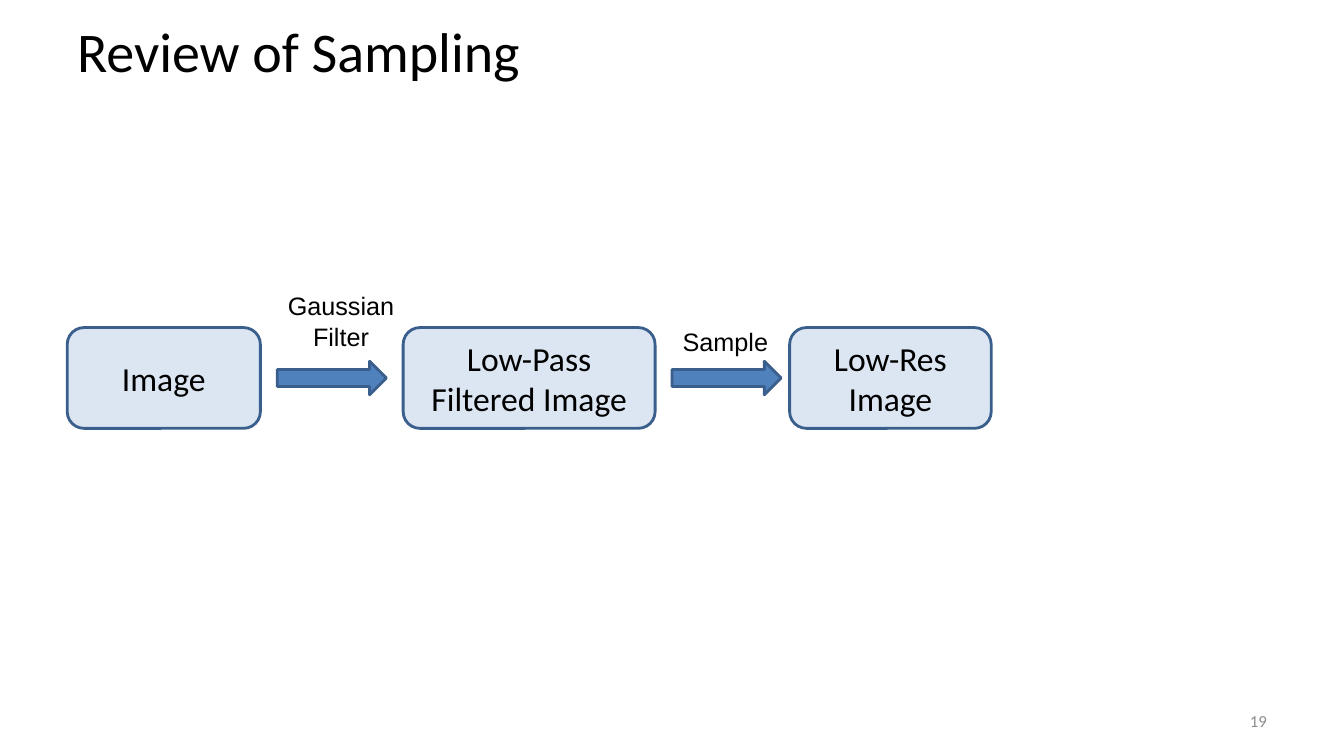
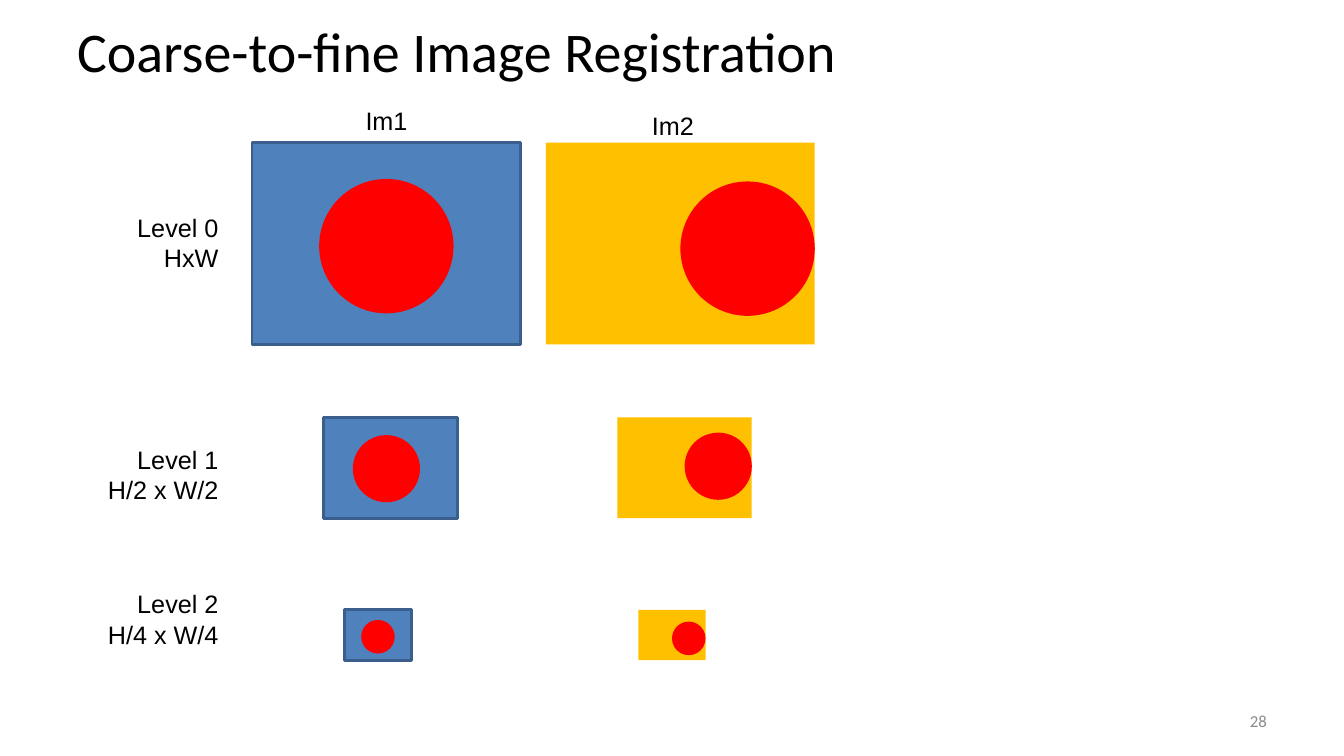
from pptx import Presentation
from pptx import util as u
from pptx.dml import color
from pptx.enum import shapes, text

COLUMNS, ROWS = 160, 90


def rgb(value):
    return color.RGBColor.from_string(value)


class Sketch:
    black, grey, red = "000000", "8C8C8C", "FF0000"
    blue, pale, edge, gold = "4F81BD", "DCE6F2", "3A5F8C", "FFC000"
    heading, label = "Calibri", "Arial"
    left, center, right = text.PP_ALIGN.LEFT, text.PP_ALIGN.CENTER, text.PP_ALIGN.RIGHT

    def __init__(self):
        self.deck = Presentation()
        self.deck.slide_width = u.Inches(13.33)
        self.deck.slide_height = u.Inches(7.5)
        self.slide = None

    def place(self, column, row, width, height):
        across = self.deck.slide_width / COLUMNS
        down = self.deck.slide_height / ROWS
        return [u.Emu(round(length)) for length in
                (column * across, row * down, width * across, height * down)]

    def add_words(self, box, lines, size, font, align, ink=black, middle=True, wrap=True):
        frame = box.text_frame
        frame.word_wrap = wrap
        frame.vertical_anchor = text.MSO_ANCHOR.MIDDLE if middle else text.MSO_ANCHOR.TOP
        for index, line in enumerate(lines):
            para = frame.add_paragraph() if index else frame.paragraphs[0]
            para.alignment = align
            span = para.add_run()
            span.text = line
            span.font.size = u.Pt(size)
            span.font.name = font
            span.font.color.rgb = rgb(ink)

    def textbox(self, area, *style, **options):
        box = self.slide.shapes.add_textbox(*self.place(*area))
        self.add_words(box, *style, **options)
        return box

    def page(self, title, number):
        self.slide = self.deck.slides.add_slide(self.deck.slide_layouts[6])
        self.textbox((8, 0, 144, 12), [title], 40, self.heading, self.left)
        self.textbox((114.7, 83.4, 37.3, 4.8), [number], 12, self.heading, self.right, self.grey)

    def caption(self, area, lines, align):
        box = self.textbox(area, lines, 18, self.label, align, middle=False, wrap=False)
        box.text_frame.auto_size = text.MSO_AUTO_SIZE.SHAPE_TO_FIT_TEXT

    def shape(self, kind, area, fill, outlined=False):
        shape = self.slide.shapes.add_shape(kind, *self.place(*area))
        shape.shadow.inherit = False
        shape.fill.solid()
        shape.fill.fore_color.rgb = rgb(fill)
        if outlined:
            shape.line.color.rgb = rgb(self.edge)
            shape.line.width = u.Pt(2)
        else:
            shape.line.fill.background()
        return shape

    def step(self, column, width, name):
        box = self.shape(shapes.MSO_SHAPE.ROUNDED_RECTANGLE, (column, 39, width, 12), self.pale, True)
        self.add_words(box, [name], 24, self.heading, self.center)

    def arrow(self, column):
        self.shape(shapes.MSO_SHAPE.RIGHT_ARROW, (column, 43, 13, 4), self.blue, True)

    def panel(self, column, row, size, fill, outlined):
        self.shape(shapes.MSO_SHAPE.RECTANGLE, (column, row, 2 * size, 1.5 * size), fill, outlined)

    def disc(self, column, row, size):
        self.shape(shapes.MSO_SHAPE.OVAL, (column, row, size, size), self.red)


def sampling(sketch):
    sketch.page("Review of Sampling", "19")
    for column, width, name in ((8, 23, "Image"), (48, 30, "Low-Pass Filtered Image"),
                                (94, 24, "Low-Res Image")):
        sketch.step(column, width, name)
    for column in (33, 80):
        sketch.arrow(column)
    sketch.caption((33, 34, 15.2, 8.5), ["Gaussian", "Filter"], sketch.center)
    sketch.caption((80, 38.2, 12.7, 4.8), ["Sample"], sketch.center)


def registration(sketch):
    sketch.page("Coarse-to-fine Image Registration", "28")
    sketch.caption((42.2, 12, 7.5, 4.8), ["Im1"], sketch.right)
    sketch.caption((76.3, 12.5, 7.5, 4.8), ["Im2"], sketch.right)
    shift = 35
    levels = (
        ("HxW", 24.7, 30, 17, 38, 21.3, 21.6),
        ("H/2 x W/2", 52.3, 38.5, 49.7, 42, 51.8, 51.5),
        ("H/4 x W/4", 69.5, 41, 72.6, 43, 73.8, 74),
    )
    for level, (extent, label_row, column, row, disc_column, disc_row, moved_row) in enumerate(levels):
        size = 16 / 2 ** level
        sketch.caption((11.5, label_row, 15.7, 8.5), [f"Level {level}", extent], sketch.right)
        sketch.panel(column, row, size, sketch.blue, True)
        sketch.disc(disc_column, disc_row, size)
        sketch.panel(column + shift, row, size, sketch.gold, False)
        sketch.disc(column + shift + size, moved_row, size)


def main():
    sketch = Sketch()
    sampling(sketch)
    registration(sketch)
    sketch.deck.save("out.pptx")


if __name__ == "__main__":
    main()
